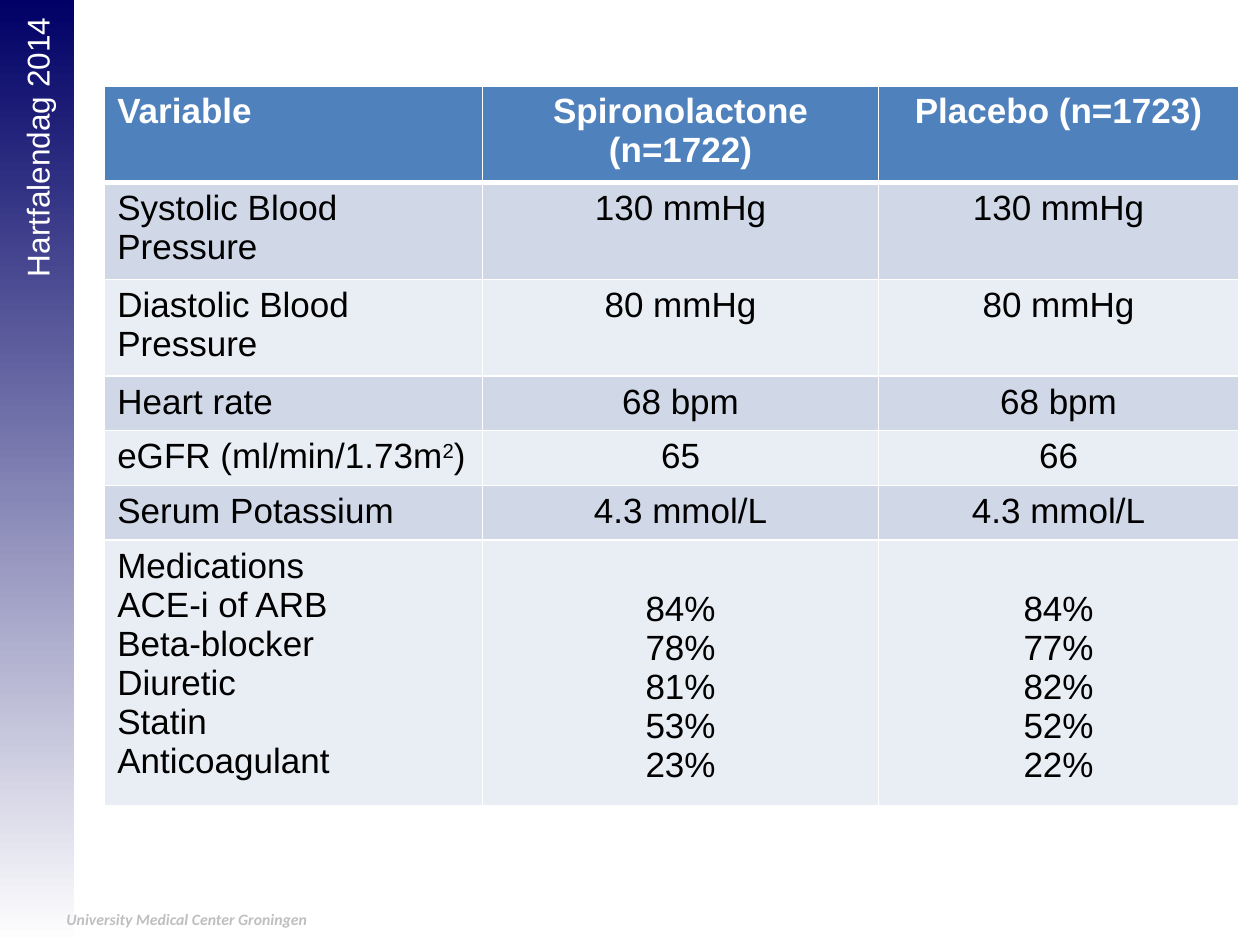
from dataclasses import dataclass

from lxml import etree
from pptx import Presentation
from pptx import util as u
from pptx.dml.color import RGBColor
from pptx.enum import shapes, text
from pptx.oxml import ns


@dataclass(frozen=True)
class Theme:
    navy: str = "000066"
    white: str = "FFFFFF"
    black: str = "000000"
    grey: str = "BFBFBF"
    header: str = "4F81BD"
    bands: tuple = ("D0D8E8", "E9EDF4")
    font: str = "Arial"
    footer_font: str = "Calibri"
    table_size: int = 20
    label_size: int = 18
    footer_size: int = 9
    thin: float = 1
    thick: float = 3


class Sheet:
    """Holds the theme and the slide that is being filled."""

    def __init__(self, slide, theme):
        self.slide = slide
        self.theme = theme

    def style(self, font, name, size, color, bold=False, italic=False):
        font.name, font.size = name, u.Pt(size)
        font.bold, font.italic = bold, italic
        font.color.rgb = RGBColor.from_string(color)

    def sidebar(self, width, height):
        bar = self.slide.shapes.add_shape(
            shapes.MSO_SHAPE.RECTANGLE, 0, 0, u.Cm(width), u.Cm(height))
        bar.shadow.inherit = False
        bar.line.fill.background()
        bar.fill.gradient()
        bar.fill.gradient_angle = 270
        for stop, color in zip(bar.fill.gradient_stops,
                               (self.theme.navy, self.theme.white)):
            stop.color.rgb = RGBColor.from_string(color)

    def label(self, words, place, align, rotation=0, **look):
        box = self.slide.shapes.add_textbox(*map(u.Cm, place))
        box.rotation = rotation
        box.text_frame.word_wrap = True
        para = box.text_frame.paragraphs[0]
        para.text = words
        para.alignment = align
        self.style(para.font, **look)

    def border(self, cell, side, points):
        line = etree.SubElement(cell._tc.get_or_add_tcPr(),
                                ns.qn(f"a:ln{side}"), w=str(u.Pt(points)))
        fill = etree.SubElement(line, ns.qn("a:solidFill"))
        etree.SubElement(fill, ns.qn("a:srgbClr"), val=self.theme.white)

    def cell(self, cell, lines, row, column):
        theme, is_header = self.theme, row == 0
        for side in "LRTB":
            heavy = (side == "B" and row == 0) or (side == "T" and row == 1)
            self.border(cell, side, theme.thick if heavy else theme.thin)
        cell.fill.solid()
        cell.fill.fore_color.rgb = RGBColor.from_string(
            theme.header if is_header else theme.bands[(row - 1) % 2])
        frame = cell.text_frame
        for index, words in enumerate(lines):
            para = frame.add_paragraph() if index else frame.paragraphs[0]
            # Text between carets is superscript
            for part, piece in enumerate(words.split("^")):
                span = para.add_run()
                span.text = piece
                if part % 2:
                    span.font._element.set("baseline", "30000")
            para.alignment = (text.PP_ALIGN.CENTER if column
                              else text.PP_ALIGN.LEFT)
            self.style(para.font, theme.font, theme.table_size,
                       theme.white if is_header else theme.black, is_header)

    def table(self, rows, left, top, widths, heights):
        table = self.slide.shapes.add_table(
            len(rows), len(widths), u.Cm(left), u.Cm(top),
            u.Cm(sum(widths)), u.Cm(sum(heights))).table
        for column, width in zip(table.columns, widths):
            column.width = u.Cm(width)
        for line, height in zip(table.rows, heights):
            line.height = u.Cm(height)
        for r, row in enumerate(rows):
            for c, words in enumerate(row):
                lines = [words] if isinstance(words, str) else words
                self.cell(table.cell(r, c), lines, r, c)
        return table


BASELINE = [
    ("Variable", "Spironolactone (n=1722)", "Placebo (n=1723)"),
    ("Systolic Blood Pressure", "130 mmHg", "130 mmHg"),
    ("Diastolic Blood Pressure", "80 mmHg", "80 mmHg"),
    ("Heart rate", "68 bpm", "68 bpm"),
    ("eGFR (ml/min/1.73m^2^)", "65", "66"),
    ("Serum Potassium", "4.3 mmol/L", "4.3 mmol/L"),
    (["Medications", "ACE-i of ARB", "Beta-blocker", "Diuretic", "Statin",
      "Anticoagulant"],
     ["84%", "78%", "81%", "53%", "23%"],
     ["84%", "77%", "82%", "52%", "22%"]),
]


def main():
    deck = Presentation()
    deck.slide_width, deck.slide_height = u.Cm(25.4), u.Cm(19.05)
    theme = Theme()
    page = Sheet(deck.slides.add_slide(deck.slide_layouts[6]), theme)

    # Sidebar with the event name, and the footer
    page.sidebar(1.5, 19.05)
    page.label("Hartfalendag 2014", (-8.46, 8.81, 18.42, 1.02),
               text.PP_ALIGN.RIGHT, rotation=270, name=theme.font,
               size=theme.label_size, color=theme.white)
    page.label("University Medical Center Groningen",
               (1.09, 18.21, 15.42, 1.32), text.PP_ALIGN.LEFT,
               name=theme.footer_font, size=theme.footer_size,
               color=theme.grey, bold=True, italic=True)

    # Baseline table; medication values start below the group heading
    table = page.table(BASELINE, 2.11, 1.73, (7.62, 7.98, 7.26),
                       [1.95] * 3 + [1.1] * 3 + [5.33])
    for column in (1, 2):
        table.cell(len(BASELINE) - 1, column).margin_top = u.Cm(1)

    deck.save("out.pptx")


if __name__ == "__main__":
    main()
